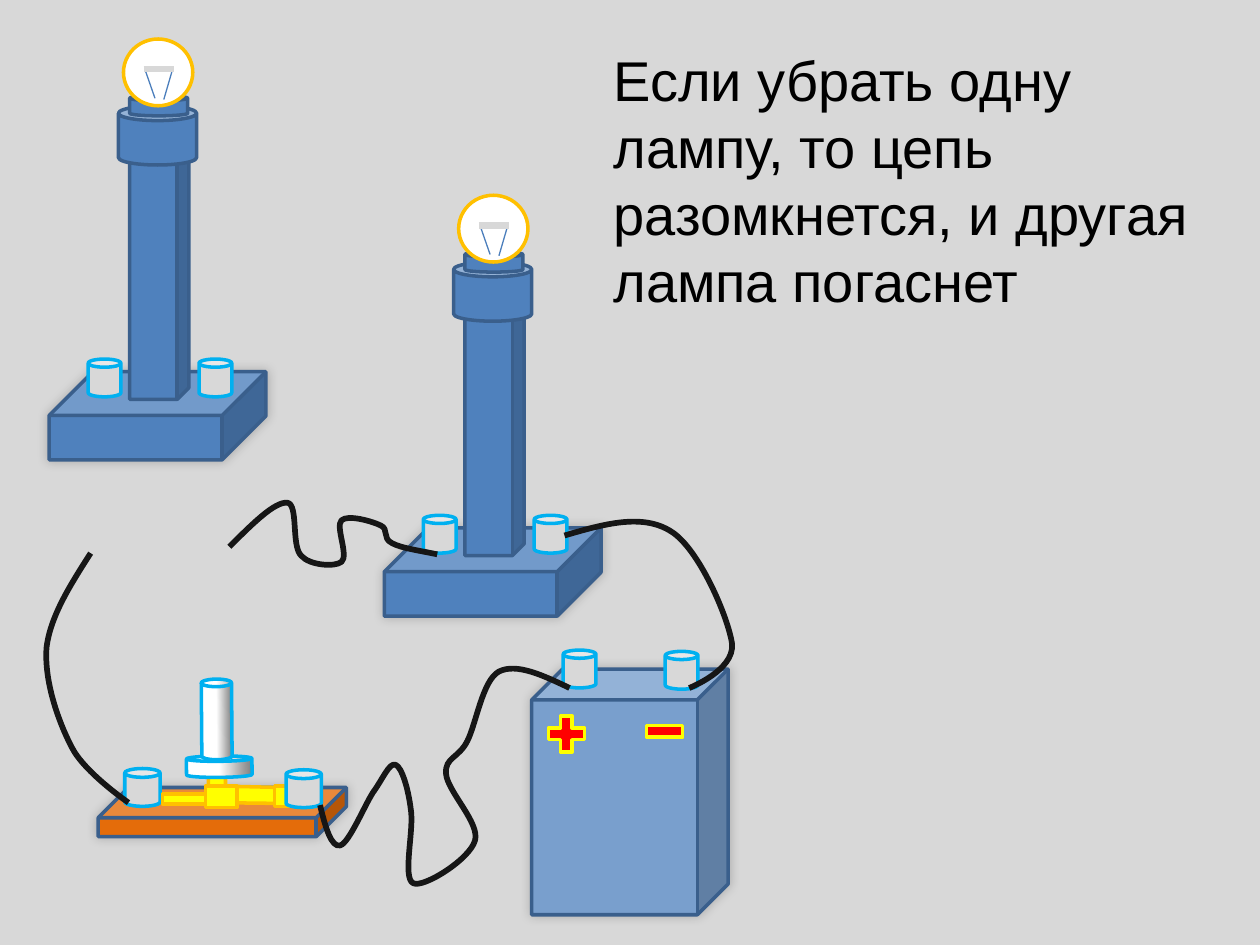
from dataclasses import dataclass

from lxml.etree import SubElement
from pptx import Presentation
from pptx.dml.color import RGBColor
from pptx.enum.shapes import MSO_CONNECTOR, MSO_SHAPE as Preset
from pptx.oxml.ns import qn
from pptx.util import Inches, Pt


@dataclass(frozen=True)
class Theme:
    background: str = "D8D8D8"
    battery: str = "799FCD"
    lamp: str = "4F81BD"
    base: str = "E46C0A"
    outline: str = "3A5F8C"
    terminal_line: str = "00B0F0"
    sign: str = "FF0000"
    yellow: str = "FFFF00"
    amber: str = "FFC000"
    white: str = "FFFFFF"
    grey: str = "808080"
    filament: str = "4B7EBC"
    wire: str = "161616"
    shadow: str = "000000"
    text: str = "000000"
    font: str = "Arial"
    text_size: int = 32
    outline_width: float = 2
    wire_width: float = 3.25


def rgb(value):
    return RGBColor.from_string(value)


class CircuitSlide:
    def __init__(self, presentation, theme):
        self.theme = theme
        self.slide = presentation.slides.add_slide(presentation.slide_layouts[6])
        self.shapes = self.slide.shapes
        fill = self.slide.background.fill
        fill.solid()
        fill.fore_color.rgb = rgb(theme.background)

    def group(self):
        self.shapes = self.slide.shapes.add_group_shape().shapes

    def ungroup(self):
        self.shapes = self.slide.shapes

    def set_line(self, shape, color, width):
        shape.line.color.rgb = rgb(color)
        shape.line.width = Pt(width)

    def paint(self, shape, fill, line):
        shape.shadow.inherit = False
        shape.fill.solid()
        shape.fill.fore_color.rgb = rgb(fill)
        self.set_line(shape, line, self.theme.outline_width)

    def shape(self, preset, left, top, width, height, fill, line=None):
        shape = self.shapes.add_shape(
            preset, Inches(left), Inches(top), Inches(width), Inches(height)
        )
        self.paint(shape, fill, line or self.theme.outline)
        return shape

    def cube(self, left, top, width, height, depth, fill, shadow=False):
        cube = self.shape(Preset.CUBE, left, top, width, height, fill)
        cube.adjustments[0] = depth
        if shadow:
            effects = cube._element.spPr.find(qn("a:effectLst"))
            outer = SubElement(
                effects, qn("a:outerShdw"), blurRad=str(Pt(6)), dist="0", dir="18900000"
            )
            color = SubElement(outer, qn("a:srgbClr"), val=self.theme.shadow)
            SubElement(color, qn("a:alpha"), val="20000")

    def terminal(self, left, top, width=0.26):
        theme = self.theme
        self.shape(Preset.CAN, left, top, width, 0.3, theme.background, theme.terminal_line)

    def button_part(self, left, top, width, height):
        theme = self.theme
        part = self.shape(
            Preset.CAN, left, top, width, height, theme.white, theme.terminal_line
        )
        part.rotation = 359.5
        part.fill.gradient()
        part.fill.gradient_angle = 0
        stops = zip(part.fill.gradient_stops, (0.5, 1), (theme.white, theme.grey))
        for stop, position, color in stops:
            stop.position = position
            stop.color.rgb = rgb(color)

    def segment(self, start, end, color, width):
        connector = self.shapes.add_connector(
            MSO_CONNECTOR.STRAIGHT, *(Inches(value) for value in (*start, *end))
        )
        self.set_line(connector, color, width)
        SubElement(connector._element.spPr, qn("a:effectLst"))

    def outline(self, points, close):
        start, *others = [(Inches(x), Inches(y)) for x, y in points]
        builder = self.shapes.build_freeform(*start)
        builder.add_line_segments(others, close=close)
        return builder.convert_to_shape()

    def polygon(self, points, fill, line):
        self.paint(self.outline(points, True), fill, line)

    def wire(self, start, *curves):
        controls = [curve[i:i + 2] for curve in curves for i in (0, 2, 4)]
        shape = self.outline([start, *controls], False)
        lines = list(shape._element.iter(qn("a:lnTo")))
        for i in range(0, len(lines), 3):
            curve = SubElement(lines[i].getparent(), qn("a:cubicBezTo"))
            for line in lines[i:i + 3]:
                curve.append(line[0])
                line.getparent().remove(line)
        shape.shadow.inherit = False
        shape.fill.background()
        self.set_line(shape, self.theme.wire, self.theme.wire_width)

    def battery(self):
        theme = self.theme
        self.group()
        self.cube(4.22, 5.31, 1.56, 1.95, 0.157, theme.battery, shadow=True)
        self.terminal(4.47, 5.16)
        self.shape(Preset.MATH_PLUS, 4.3, 5.63, 0.39, 0.39, theme.sign, theme.yellow)
        self.shape(Preset.MATH_MINUS, 5.08, 5.61, 0.39, 0.39, theme.sign, theme.yellow)
        self.terminal(5.28, 5.17)
        self.ungroup()

    def lamp(self, left, top):
        theme = self.theme
        self.group()
        self.cube(left, top + 2.64, 1.72, 0.7, 0.497, theme.lamp, shadow=True)
        self.cube(left + 0.64, top + 0.83, 0.47, 2.03, 0.199, theme.lamp)
        self.terminal(left + 1.19, top + 2.54)
        self.terminal(left + 0.31, top + 2.54)
        self.shape(Preset.CAN, left + 0.55, top + 0.53, 0.62, 0.47, theme.lamp)
        self.shape(Preset.CAN, left + 0.64, top + 0.45, 0.46, 0.16, theme.lamp)
        self.shape(Preset.OVAL, left + 0.59, top, 0.55, 0.53, theme.white, theme.amber)
        for x1, x2, y2, color, width in (
            (0.76, 0.84, 0.47, theme.filament, 0.75),
            (0.98, 0.91, 0.48, theme.filament, 0.75),
            (0.75, 0.99, 0.24, theme.background, 3.5),
        ):
            self.segment((left + x1, top + 0.24), (left + x2, top + y2), color, width)
        self.ungroup()

    def switch(self):
        theme = self.theme
        self.cube(0.78, 6.25, 1.97, 0.39, 0.616, theme.base, shadow=True)
        self.terminal(0.99, 6.1, 0.28)
        self.group()
        contact = [(1.65, 6.37), (1.66, 5.98), (1.79, 6.05),
                   (1.79, 6.24), (2.2, 6.25), (2.47, 6.38)]
        self.polygon(contact, theme.yellow, theme.amber)
        self.button_part(1.48, 6, 0.52, 0.17)
        self.button_part(1.6, 5.39, 0.24, 0.64)
        self.ungroup()
        for box in ((1.29, 6.3, 0.49, 0.08), (1.63, 6.24, 0.25, 0.17), (2.18, 6.24, 0.25, 0.16)):
            self.shape(Preset.RECTANGLE, *box, theme.yellow, theme.amber)
        self.terminal(2.27, 6.11, 0.28)

    def text(self, words, left, top, width, height):
        theme = self.theme
        box = self.shapes.add_textbox(
            Inches(left), Inches(top), Inches(width), Inches(height)
        )
        box.text_frame.word_wrap = True
        paragraph = box.text_frame.paragraphs[0]
        paragraph.text = words
        paragraph.font.name = theme.font
        paragraph.font.size = Pt(theme.text_size)
        paragraph.font.color.rgb = rgb(theme.text)


def main():
    presentation = Presentation()
    presentation.slide_width = Inches(10)
    presentation.slide_height = Inches(7.5)
    circuit = CircuitSlide(presentation, Theme())

    circuit.battery()
    circuit.lamp(0.39, 0.31)
    circuit.lamp(3.05, 1.55)
    circuit.switch()
    circuit.wire(
        (0.72, 4.39),
        (0.56, 4.64, 0.4, 4.89, 0.37, 5.14),
        (0.35, 5.4, 0.46, 5.72, 0.57, 5.93),
        (0.67, 6.13, 1.02, 6.37, 1.02, 6.37),
    )
    circuit.wire(
        (1.82, 4.34),
        (2, 4.16, 2.18, 3.98, 2.28, 3.99),
        (2.37, 4, 2.31, 4.33, 2.39, 4.41),
        (2.46, 4.49, 2.66, 4.5, 2.71, 4.46),
        (2.77, 4.41, 2.66, 4.18, 2.71, 4.13),
        (2.76, 4.08, 2.96, 4.14, 3.02, 4.17),
        (3.09, 4.2, 3.03, 4.27, 3.11, 4.31),
        (3.18, 4.35, 3.33, 4.37, 3.47, 4.4),
    )
    circuit.wire(
        (2.54, 6.39),
        (2.58, 6.56, 2.63, 6.73, 2.7, 6.71),
        (2.77, 6.69, 2.89, 6.4, 2.96, 6.29),
        (3.04, 6.18, 3.09, 6.05, 3.14, 6.07),
        (3.19, 6.09, 3.24, 6.26, 3.26, 6.42),
        (3.29, 6.58, 3.19, 6.97, 3.28, 7.01),
        (3.36, 7.05, 3.73, 6.82, 3.77, 6.67),
        (3.81, 6.53, 3.55, 6.28, 3.54, 6.14),
        (3.53, 6.01, 3.64, 6.02, 3.71, 5.88),
        (3.78, 5.74, 3.83, 5.4, 3.96, 5.33),
        (4.1, 5.26, 4.31, 5.36, 4.52, 5.46),
    )
    circuit.wire(
        (4.48, 4.25),
        (4.79, 4.16, 5.1, 4.07, 5.33, 4.22),
        (5.55, 4.36, 5.78, 4.9, 5.81, 5.11),
        (5.83, 5.32, 5.47, 5.46, 5.47, 5.46),
    )
    circuit.text(
        "Если убрать одну лампу, то цепь разомкнется, и другая лампа погаснет",
        4.77, 0.31, 5.23, 2.26,
    )
    presentation.save("out.pptx")


if __name__ == "__main__":
    main()
